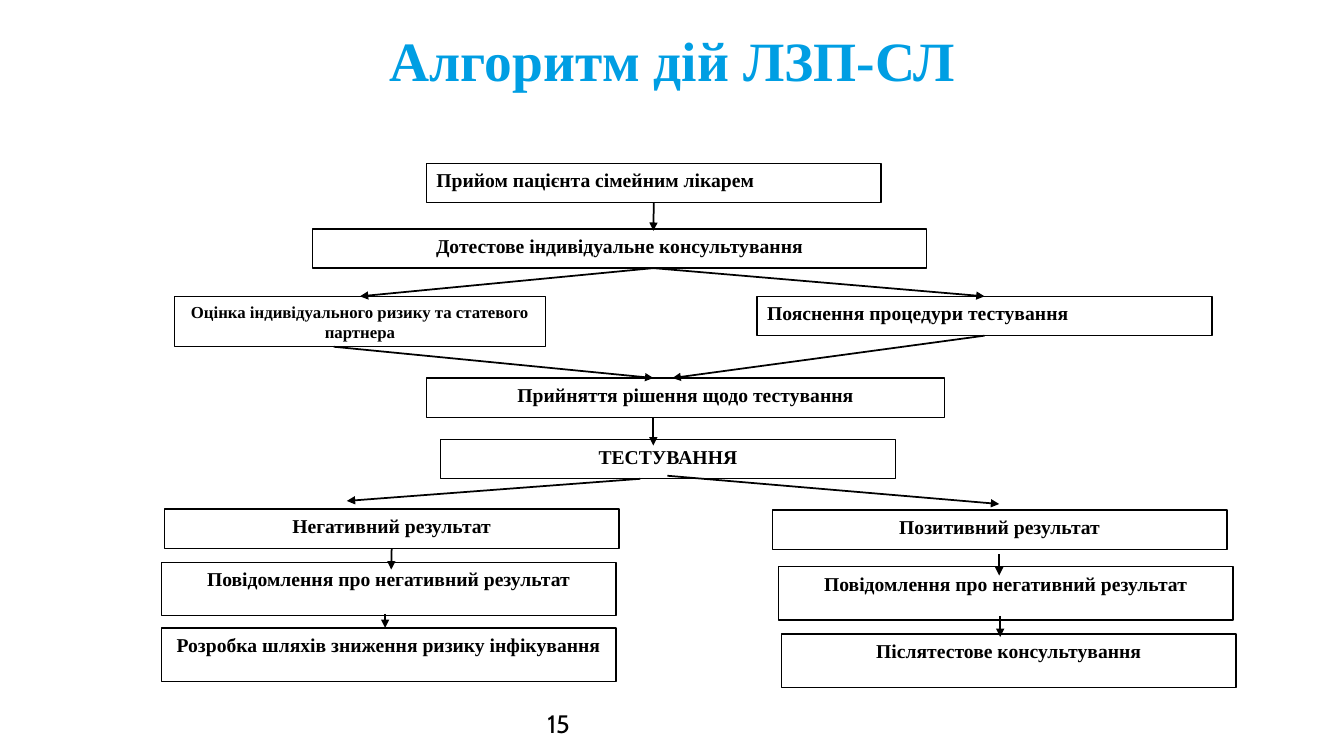
from lxml.etree import SubElement
from pptx import Presentation
from pptx.dml.color import RGBColor
from pptx.enum.shapes import MSO_CONNECTOR, MSO_SHAPE
from pptx.enum.text import MSO_ANCHOR, PP_ALIGN
from pptx.oxml.ns import qn
from pptx.util import Inches, Pt

SERIF = "Times New Roman"
BLACK = "000000"
BLUE = "009EE3"
LEFT, CENTER = PP_ALIGN.LEFT, PP_ALIGN.CENTER
TOP_SIDE, BOTTOM_SIDE = 0, 2
LINE_HEIGHT, TALL_HEIGHT = 0.39, 0.53
WIDTH = 4.51

# Step name: text, left, top, width, height, alignment, text size
STEPS = {
    "visit": ("Прийом пацієнта сімейним лікарем",
              4.23, 1.62, WIDTH, LINE_HEIGHT, LEFT, 14),
    "pretest": ("Дотестове індивідуальне консультування",
                3.1, 2.27, 6.09, LINE_HEIGHT, CENTER, 14),
    "risk": ("Оцінка індивідуального ризику та статевого партнера",
             1.73, 2.94, 3.68, 0.5, CENTER, 12),
    "procedure": ("Пояснення процедури тестування",
                  7.51, 2.94, WIDTH, LINE_HEIGHT, LEFT, 14),
    "decision": ("Прийняття рішення щодо тестування",
                 4.23, 3.75, 5.14, LINE_HEIGHT, CENTER, 14),
    "testing": ("ТЕСТУВАННЯ",
                4.37, 4.36, WIDTH, LINE_HEIGHT, CENTER, 14),
    "negative": ("Негативний результат",
                 1.63, 5.05, WIDTH, LINE_HEIGHT, CENTER, 14),
    "negative notice": ("Повідомлення про негативний результат",
                        1.6, 5.58, WIDTH, TALL_HEIGHT, CENTER, 14),
    "reduction": ("Розробка шляхів зниження ризику інфікування",
                  1.6, 6.23, WIDTH, TALL_HEIGHT, CENTER, 14),
    "positive": ("Позитивний результат",
                 7.66, 5.06, WIDTH, LINE_HEIGHT, CENTER, 14),
    "positive notice": ("Повідомлення про негативний результат",
                        7.72, 5.62, WIDTH, TALL_HEIGHT, CENTER, 14),
    "posttest": ("Післятестове консультування",
                 7.75, 6.29, WIDTH, TALL_HEIGHT, CENTER, 14),
}

# Start point, end point, step joined at its bottom, step joined at its top
ARROWS = [
    ((6.48, 2.02), (6.48, 2.29), "visit", None),
    ((6.48, 2.66), (3.57, 2.94), None, "risk"),
    ((6.48, 2.66), (9.76, 2.94), None, "procedure"),
    ((3.31, 3.44), (6.48, 3.75), None, None),
    ((9.79, 3.33), (6.67, 3.75), "procedure", None),
    ((6.48, 4.15), (6.48, 4.42), None, None),
    ((6.35, 4.75), (3.44, 4.97), None, None),
    ((6.62, 4.72), (9.91, 5.0), None, None),
    ((3.88, 5.44), (3.88, 5.65), "negative", None),
    ((3.82, 6.09), (3.82, 6.23), None, None),
    ((9.91, 5.5), (9.91, 5.71), None, None),
    ((9.92, 6.11), (9.92, 6.32), None, None),
]


def color(value):
    return RGBColor.from_string(value)


def place(shape, left, top, width, height):
    shape.left, shape.top = Inches(left), Inches(top)
    shape.width, shape.height = Inches(width), Inches(height)


def write(frame, text, size, font=SERIF, shade=BLACK, bold=True, align=LEFT):
    para = frame.paragraphs[0]
    para.alignment = align
    span = para.add_run()
    span.text = text
    span.font.name = font
    span.font.size = Pt(size)
    span.font.bold = bold
    span.font.color.rgb = color(shade)
    return para


def add_title(page, text):
    title = page.shapes.title
    place(title, 0.37, 0.28, 12.6, 0.71)
    title.text_frame.vertical_anchor = MSO_ANCHOR.MIDDLE
    para = write(title.text_frame, text, 39.6, shade=BLUE, align=CENTER)
    para.line_spacing = 0.9


def add_page_number(page, text):
    box = page.shapes.add_textbox(
        Inches(5.33), Inches(6.98), Inches(3.11), Inches(0.23))
    box.text_frame.word_wrap = True
    write(box.text_frame, text, 18, font="Cabin", bold=False)


def add_step(page, text, left, top, width, height, align, size):
    box = page.shapes.add_shape(
        MSO_SHAPE.RECTANGLE,
        Inches(left), Inches(top), Inches(width), Inches(height))
    box.shadow.inherit = False
    box.fill.background()
    box.line.color.rgb = color(BLACK)
    box.line.width = Pt(1)
    box.text_frame.word_wrap = True
    box.text_frame.vertical_anchor = MSO_ANCHOR.TOP
    write(box.text_frame, text, size, align=align)
    return box


def add_arrow(page, start, end, source, target):
    arrow = page.shapes.add_connector(
        MSO_CONNECTOR.STRAIGHT, *map(Inches, start + end))
    if source is not None:
        arrow.begin_connect(source, BOTTOM_SIDE)
    if target is not None:
        arrow.end_connect(target, TOP_SIDE)
    arrow.line.color.rgb = color(BLACK)
    arrow.line.width = Pt(1.25)
    # Arrowhead, and no shadow
    properties = arrow.line._get_or_add_ln()
    SubElement(properties, qn("a:tailEnd"), type="triangle")
    SubElement(arrow._element.spPr, qn("a:effectLst"))


def main():
    deck = Presentation()
    deck.slide_width, deck.slide_height = Inches(13.33), Inches(7.5)
    page = deck.slides.add_slide(deck.slide_layouts[5])

    # Title and page number
    add_title(page, "Алгоритм дій ЛЗП-СЛ")
    add_page_number(page, "15")

    # Flowchart
    boxes = {name: add_step(page, *step) for name, step in STEPS.items()}
    for start, end, source, target in ARROWS:
        add_arrow(page, start, end, boxes.get(source), boxes.get(target))

    deck.save("out.pptx")


if __name__ == "__main__":
    main()
